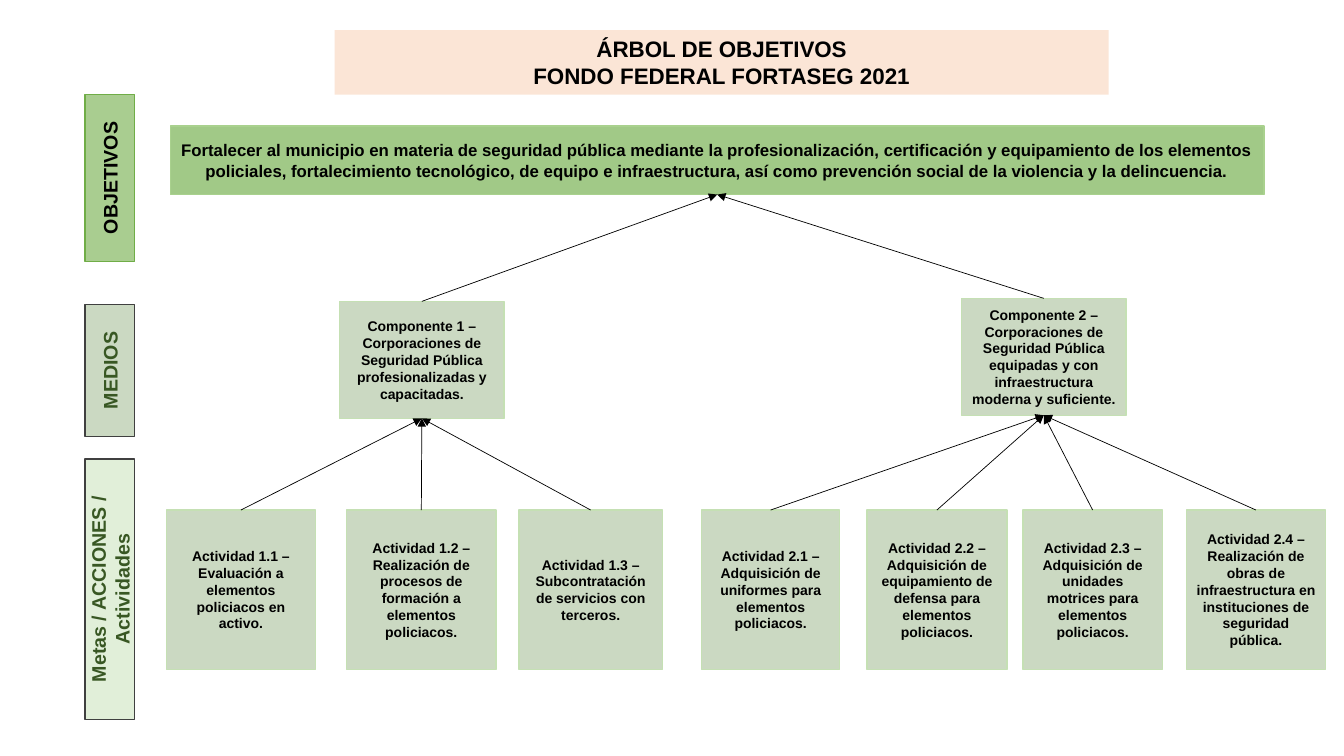
"""Builds the objectives tree slide for the FORTASEG 2021 federal fund."""
import pptx
import pptx.dml.color
import pptx.enum.shapes
import pptx.enum.text
import pptx.oxml
import pptx.oxml.ns
import pptx.util

RGBColor = pptx.dml.color.RGBColor
BLACK = RGBColor(0x00, 0x00, 0x00)
CHARCOAL = RGBColor(0x40, 0x40, 0x40)
PEACH = RGBColor(0xFB, 0xE5, 0xD6)
GREEN = RGBColor(0x70, 0xAD, 0x47)
SOFT_GREEN = RGBColor(0xA9, 0xD1, 0x8E)
PALE_GREEN = RGBColor(0xC5, 0xE0, 0xB4)
MOSS = RGBColor(0x54, 0x82, 0x35)
FOREST = RGBColor(0x38, 0x57, 0x23)

RECTANGLE = pptx.enum.shapes.MSO_SHAPE.RECTANGLE
PROCESS = pptx.enum.shapes.MSO_SHAPE.FLOWCHART_PROCESS
STRAIGHT = pptx.enum.shapes.MSO_CONNECTOR.STRAIGHT
TOP, MIDDLE = pptx.enum.text.MSO_ANCHOR.TOP, pptx.enum.text.MSO_ANCHOR.MIDDLE
CENTER = pptx.enum.text.PP_ALIGN.CENTER
TOP_SIDE, BOTTOM_SIDE = 0, 2

deck = pptx.Presentation()
deck.slide_width = pptx.util.Inches(13.33)
deck.slide_height = pptx.util.Inches(7.5)
page = deck.slides.add_slide(deck.slide_layouts[6])
COLUMN = deck.slide_width / 40
ROW = deck.slide_height / 30


def add_block(kind, frame, lines, size, fill, opacity=100, border=None, ink=BLACK, anchor=MIDDLE):
    block = page.shapes.add_shape(kind, *[round(length) for length in frame])
    block.shadow.inherit = False
    block.fill.solid()
    block.fill.fore_color.rgb = fill
    if opacity < 100:
        color = block.fill._xPr.find(".//" + pptx.oxml.ns.qn("a:srgbClr"))
        alpha = pptx.oxml.parse_xml(f'<a:alpha {pptx.oxml.ns.nsdecls("a")} val="{opacity * 1000}"/>')
        color.append(alpha)
    if border is None:
        block.line.fill.background()
    else:
        block.line.color.rgb = border
        block.line.width = pptx.util.Pt(1)
    block.text_frame.word_wrap = True
    block.text_frame.vertical_anchor = anchor
    for number, line in enumerate(lines):
        para = block.text_frame.paragraphs[0] if number == 0 else block.text_frame.add_paragraph()
        para.alignment = CENTER
        span = para.add_run()
        span.text = line
        span.font.color.rgb = ink
        for name, value in {"name": "Arial", "size": pptx.util.Pt(size), "bold": True}.items():
            setattr(span.font, name, value)
    return block


def add_arrow(child, parent):
    arrow = page.shapes.add_connector(STRAIGHT, 0, 0, 0, 0)
    arrow.begin_connect(child, TOP_SIDE)
    arrow.end_connect(parent, BOTTOM_SIDE)
    arrow.line.color.rgb = BLACK
    arrow.line.width = pptx.util.Pt(0.5)
    namespace = pptx.oxml.ns.nsdecls("a")
    arrow.line._get_or_add_ln().append(pptx.oxml.parse_xml(f'<a:tailEnd {namespace} type="triangle"/>'))
    arrow._element.spPr.append(pptx.oxml.parse_xml(f"<a:effectLst {namespace}/>"))


add_block(RECTANGLE, (9.96 * COLUMN, 1.2 * ROW, 23.04 * COLUMN, 2.56 * ROW),
          ["ÁRBOL DE OBJETIVOS", "FONDO FEDERAL FORTASEG 2021"], 16, PEACH, anchor=TOP)

goal = add_block(
    PROCESS, (5.07 * COLUMN, 5 * ROW, 32.55 * COLUMN, 2.72 * ROW),
    ["Fortalecer al municipio en materia de seguridad pública mediante la profesionalización, "
     "certificación y equipamiento de los elementos policiales, fortalecimiento tecnológico, de equipo "
     "e infraestructura, así como prevención social de la violencia y la delincuencia."],
    12, GREEN, 65, SOFT_GREEN)

LEVEL_CENTER, LEVEL_THICKNESS = 3.27 * COLUMN, 1.96 * ROW
levels = [
    ("OBJETIVOS", 7.06, 6.64, GREEN, 60, GREEN, BLACK),
    ("MEDIOS", 14.7, 5.24, MOSS, 30, CHARCOAL, FOREST),
    ("Metas / ACCIONES / Actividades", 23.38, 10.32, PALE_GREEN, 50, CHARCOAL, FOREST),
]
for label, middle, length, fill, opacity, border, ink in levels:
    frame = (LEVEL_CENTER - length * ROW / 2, middle * ROW - LEVEL_THICKNESS / 2,
             length * ROW, LEVEL_THICKNESS)
    level = add_block(PROCESS, frame, [label], 14, fill, opacity, border, ink)
    level.rotation = 270

branches = [
    (10.11, 11.96,
     "Componente 1 – Corporaciones de Seguridad Pública profesionalizadas y capacitadas.",
     [(4.95, 4.44, "Actividad 1.1 – Evaluación a elementos policiacos en activo."),
      (10.32, 4.44, "Actividad 1.2 – Realización de procesos de formación a elementos policiacos."),
      (15.45, 4.26, "Actividad 1.3 – Subcontratación de servicios con terceros.")]),
    (28.62, 11.84,
     "Componente 2 – Corporaciones de Seguridad Pública equipadas y con infraestructura "
     "moderna y suficiente.",
     [(20.88, 4.11, "Actividad 2.1 – Adquisición de uniformes para elementos policiacos."),
      (25.8, 4.17, "Actividad 2.2 – Adquisición de equipamiento de defensa para elementos policiacos."),
      (30.45, 4.14, "Actividad 2.3 – Adquisición de unidades motrices para elementos policiacos."),
      (35.31, 4.14, "Actividad 2.4 – Realización de obras de infraestructura en instituciones "
                    "de seguridad pública.")]),
]
for left, top, purpose, activities in branches:
    component = add_block(PROCESS, (left * COLUMN, top * ROW, 4.89 * COLUMN, 4.64 * ROW),
                          [purpose], 10, MOSS, 30, PALE_GREEN)
    add_arrow(component, goal)
    for start, width, task in activities:
        activity = add_block(PROCESS, (start * COLUMN, 20.24 * ROW, width * COLUMN, 6.32 * ROW),
                             [task], 10, MOSS, 30, PALE_GREEN)
        add_arrow(activity, component)

deck.save("out.pptx")
